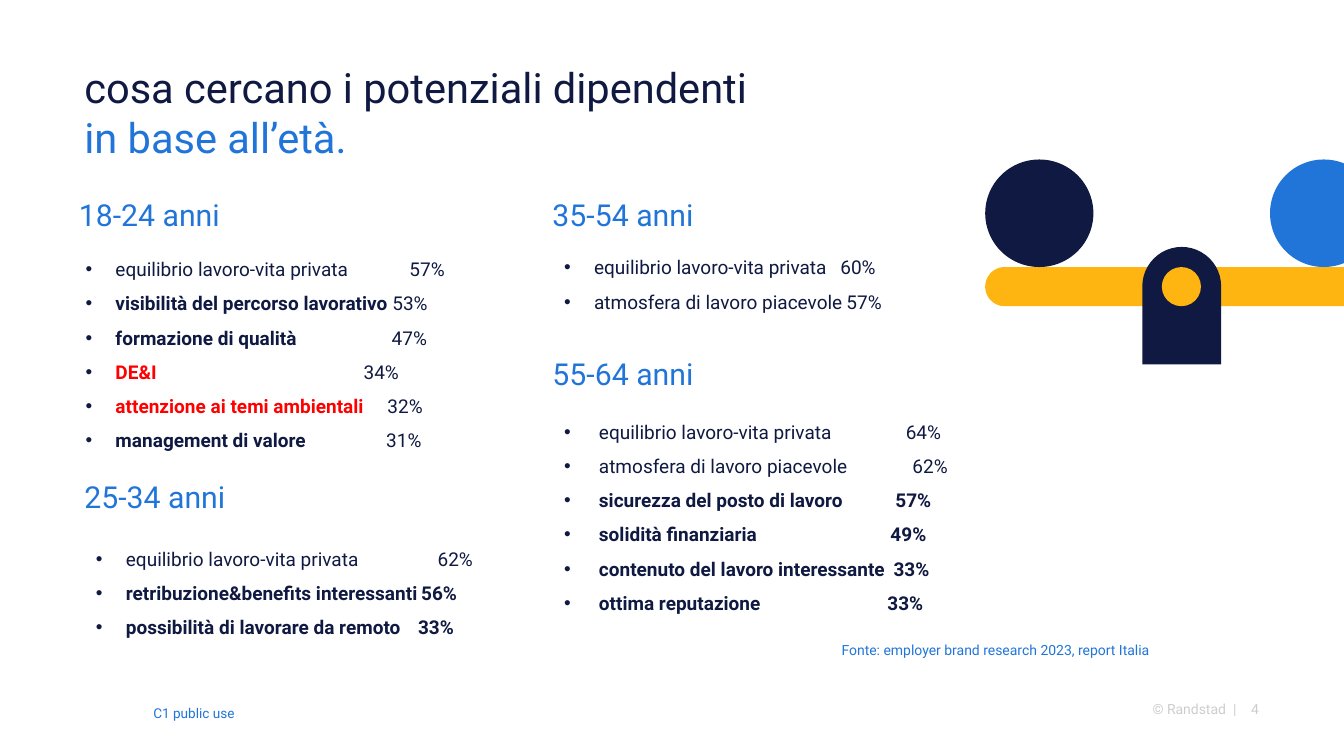
import math

from lxml import etree
from pptx import Presentation
from pptx import util as u
from pptx.dml.color import RGBColor
from pptx.enum import shapes, text
from pptx.oxml.ns import qn

COLORS = {"navy": "0F1941", "blue": "2175D9", "yellow": "FFB511",
          "red": "FF0000", "grey": "CDCDCD"}
FONT = "Roboto"
SLIDE_W, SLIDE_H = 21.99, 12.37
LIST_INSETS = (0.16, 0.08, 0.16, 0.08)

# Age groups: heading place, list place, text indent and
# rows of (label, label style, value, value is bold, value left)
AGE_GROUPS = [
    ("18-24 anni", (1.29, 3.22), (1.21, 3.95, 8.65, 3.37), 0.52, [
        ("equilibrio lavoro-vita privata", "plain", "57%", False, 6.7),
        ("visibilità del percorso lavorativo", "bold", "53%", False, 6.42),
        ("formazione di qualità", "bold", "47%", False, 6.41),
        ("DE&I", "red", "34%", False, 5.95),
        ("attenzione ai temi ambientali", "red", "32%", False, 6.34),
        ("management di valore", "bold", "31%", False, 6.32)]),
    ("25-34 anni", (1.38, 7.83), (1.38, 8.69, 8.55, 1.67), 0.52, [
        ("equilibrio lavoro-vita privata", "plain", "62%", False, 7.16),
        ("retribuzione&benefits interessanti", "bold", "56%", True, 6.89),
        ("possibilità di lavorare da remoto", "bold", "33%", True, 6.84)]),
    ("35-54 anni", (9.04, 3.22), (9.04, 3.92, 6.74, 1.11), 0.52, [
        ("equilibrio lavoro-vita privata", "plain", "60%", False, 13.75),
        ("atmosfera di lavoro piacevole", "plain", "57%", False, 13.85)]),
    ("55-64 anni", (9.04, 5.82), (9.04, 6.61, 9.39, 3.37), 0.6, [
        ("equilibrio lavoro-vita privata", "plain", "64%", False, 14.82),
        ("atmosfera di lavoro piacevole", "plain", "62%", False, 14.93),
        ("sicurezza del posto di lavoro", "bold", "57%", True, 14.65),
        ("solidità finanziaria", "bold", "49%", True, 14.57),
        ("contenuto del lavoro interessante", "bold", "33%", True, 14.62),
        ("ottima reputazione", "bold", "33%", True, 14.52)]),
]


def rgb(name):
    return RGBColor.from_string(COLORS[name])


def add_span(para, words, size=22.4, color="navy", bold=False):
    span = para.add_run()
    span.text = words
    span.font.name = FONT
    span.font.size = u.Pt(size)
    span.font.bold = bold
    span.font.color.rgb = rgb(color)


def add_frame(page, place, insets=(0, 0, 0, 0), anchor=text.MSO_ANCHOR.TOP):
    box = page.shapes.add_textbox(*map(u.Inches, place))
    frame = box.text_frame
    frame.word_wrap = True
    frame.vertical_anchor = anchor
    (frame.margin_left, frame.margin_top,
     frame.margin_right, frame.margin_bottom) = map(u.Inches, insets)
    return frame


def add_label(page, words, place, insets=(0, 0, 0, 0), align=text.PP_ALIGN.LEFT,
              anchor=text.MSO_ANCHOR.TOP, **style):
    para = add_frame(page, place, insets, anchor).paragraphs[0]
    para.alignment = align
    add_span(para, words, **style)


def add_row(frame, index, left, hanging=0):
    para = frame.paragraphs[0] if index == 0 else frame.add_paragraph()
    para.line_spacing = 1.5
    props = para._p.get_or_add_pPr()
    props.set("marL", str(u.Inches(left)))
    props.set("indent", str(-u.Inches(hanging)))
    return para


def add_bullet(para):
    props = para._p.get_or_add_pPr()
    tint = etree.SubElement(props, qn("a:buClr"))
    etree.SubElement(tint, qn("a:srgbClr"), val=COLORS["navy"])
    etree.SubElement(props, qn("a:buFont"), typeface="Arial")
    etree.SubElement(props, qn("a:buChar"), char="•")


def add_age_group(page, heading, heading_at, place, indent, rows):
    add_label(page, heading, (*heading_at, 5.2, 0.6), size=35.6, color="blue")
    first_left = min(row[-1] for row in rows)
    labels = add_frame(page, place, LIST_INSETS)
    values = add_frame(page, (first_left, place[1], 1.8, place[3]), (0, 0.08, 0, 0.08))
    for index, (label, style, value, value_bold, value_left) in enumerate(rows):
        para = add_row(labels, index, indent, indent - 0.03)
        add_bullet(para)
        add_span(para, label, bold=style != "plain",
                 color="red" if style == "red" else "navy")
        para = add_row(values, index, value_left - first_left)
        add_span(para, value, bold=value_bold)


def paint(shape, color):
    shape.shadow.inherit = False
    shape.fill.solid()
    shape.fill.fore_color.rgb = rgb(color)
    shape.line.fill.background()


def add_preset(page, kind, place, color):
    shape = page.shapes.add_shape(kind, *map(u.Inches, place))
    paint(shape, color)
    return shape


def add_outline(page, points, color):
    points = [(u.Inches(x), u.Inches(y)) for x, y in points]
    builder = page.shapes.build_freeform(*points[0])
    builder.add_line_segments(points[1:], close=True)
    paint(builder.convert_to_shape(), color)


def arc(center_x, center_y, radius, start, end, steps=60):
    angles = [math.radians(start + (end - start) * i / steps) for i in range(steps + 1)]
    return [(center_x + radius * math.cos(a), center_y + radius * math.sin(a))
            for a in angles]


def add_seesaw(page):
    # Beam, round at the left and cut by the slide edge
    beam = arc(16.44, 4.69, 0.32, 90, 270)
    add_outline(page, beam + [(SLIDE_W, 4.37), (SLIDE_W, 5.01)], "yellow")
    # Post with its pivot
    post = add_preset(page, shapes.MSO_SHAPE.ROUND_2_SAME_RECTANGLE,
                      (18.69, 4.04, 1.29, 1.92), "navy")
    post.adjustments[0] = 0.5
    post.adjustments[1] = 0
    oval = shapes.MSO_SHAPE.OVAL
    add_preset(page, oval, (19.01, 4.37, 0.64, 0.64), "yellow")
    # Balls, the right one cut by the slide edge
    add_preset(page, oval, (16.12, 2.61, 1.77, 1.76), "navy")
    center, radius = 21.66, 0.88
    cut = math.degrees(math.acos((SLIDE_W - center) / radius))
    add_outline(page, arc(center, 3.49, radius, cut, 360 - cut), "blue")


def add_title(page):
    para = add_frame(page, (1.38, 1, 19.24, 1.69)).paragraphs[0]
    para.line_spacing = 1.01
    add_span(para, "cosa cercano i potenziali dipendenti", size=49)
    para.add_line_break()
    add_span(para, "in base all’età.", size=49, color="blue")


def add_footer(page):
    for words, left, width in [("© Randstad", 10.96, 9.1), ("|", 20.12, 0.11),
                               ("4", 20.14, 0.46)]:
        add_label(page, words, (left, 11.27, width, 0.66), size=16.5, color="grey",
                  align=text.PP_ALIGN.RIGHT, anchor=text.MSO_ANCHOR.MIDDLE)
    add_label(page, "C1 public use", (2.35, 11.45, 1.87, 0.44), LIST_INSETS,
              size=16, color="blue")
    add_label(page, "Fonte: employer brand research 2023, report Italia",
              (13.74, 10.47, 6.63, 0.3), (0.03, 0.02, 0, 0), size=16.5, color="blue")


def main():
    deck = Presentation()
    deck.slide_width, deck.slide_height = u.Inches(SLIDE_W), u.Inches(SLIDE_H)
    page = deck.slides.add_slide(deck.slide_layouts[6])
    add_title(page)
    add_seesaw(page)
    for group in AGE_GROUPS:
        add_age_group(page, *group)
    add_footer(page)
    deck.save("out.pptx")


if __name__ == "__main__":
    main()
